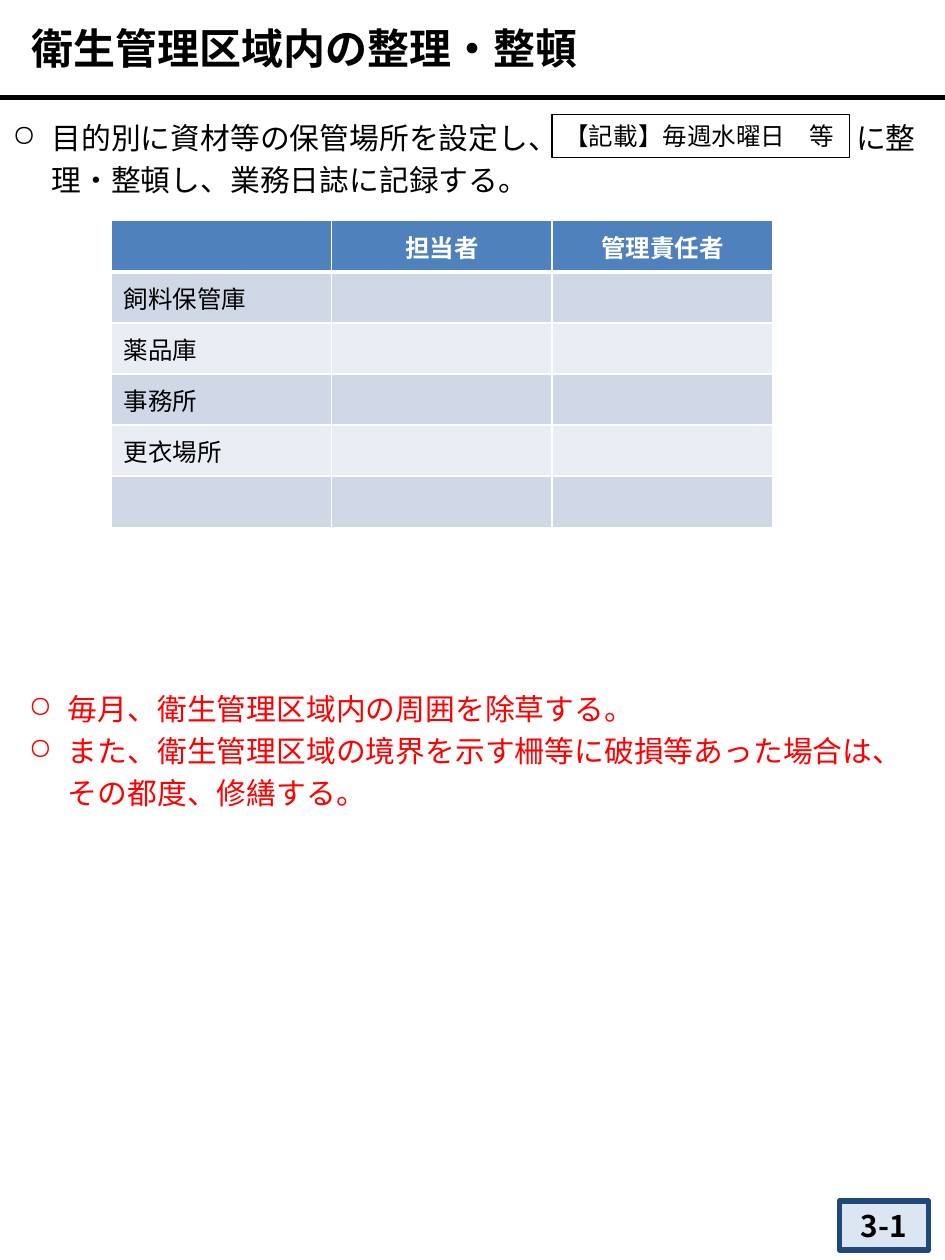
import pptx
import pptx.util
import pptx.dml.color
import pptx.enum.shapes
import pptx.enum.text
import pptx.oxml
import pptx.oxml.ns
from lxml import etree

Cm, Pt = pptx.util.Cm, pptx.util.Pt
ALIGN = pptx.enum.text.PP_ALIGN
MIDDLE = pptx.enum.text.MSO_ANCHOR.MIDDLE
RECT = pptx.enum.shapes.MSO_SHAPE.RECTANGLE

# Content
TITLE = "衛生管理区域内の整理・整頓"
GAP = "\u3000"  # one wide space, stretched to leave room for the entry box
TIDY = [["目的別に資材等の保管場所を設定し、", GAP, "に整理・整頓し、業務日誌に記録する。"]]
ENTRY = "【記載】毎週水曜日　等"
ROWS = [
    ["", "担当者", "管理責任者"],
    ["飼料保管庫", "", ""],
    ["薬品庫", "", ""],
    ["事務所", "", ""],
    ["更衣場所", "", ""],
    ["", "", ""],
]
REPAIR = [
    ["毎月、衛生管理区域内の周囲を除草する。"],
    ["また、衛生管理区域の境界を示す柵等に破損等あった場合は、その都度、修繕する。"],
]
PAGE = "3-1"

THEME = {
    "font": "Noto Sans CJK JP",
    "title": 24, "body": 17, "small": 14, "line": 24,
    "ink": "000000", "alert": "FF0000", "white": "FFFFFF",
    "head": "4F81BD", "bands": ["D0D8E8", "E9EDF4"],
    "tag": "DCE6F2", "edge": "1F497D",
}


def color(name):
    return pptx.dml.color.RGBColor.from_string(THEME.get(name, name))


def style(para, size, ink="ink", bold=False):
    for run in para.runs:
        font = run.font
        font.size, font.bold = Pt(THEME[size]), bold
        font.color.rgb = color(ink)
        font.name = THEME["font"]
        latin = font._element.find(pptx.oxml.ns.qn("a:latin"))
        east = etree.Element(pptx.oxml.ns.qn("a:ea"), typeface=THEME["font"])
        latin.addnext(east)


def bullets(slide, box, items, ink):
    frame = slide.shapes.add_textbox(*map(Cm, box)).text_frame
    frame.word_wrap = True
    for i, parts in enumerate(items):
        para = frame.add_paragraph() if i else frame.paragraphs[0]
        props = para._p.get_or_add_pPr()
        props.set("marL", str(Cm(0.79)))
        props.set("indent", str(-Cm(0.79)))
        etree.SubElement(props, pptx.oxml.ns.qn("a:buChar"), char="○")
        para.line_spacing = Pt(THEME["line"])
        for part in parts:
            run = para.add_run()
            run.text = part
            if part == GAP:  # ten characters wide in all
                run.font._element.set("spc", str(9 * THEME["body"] * 100))
        style(para, "body", ink)


def panel(slide, box, text, size, fill, edge, width, bold, align):
    shape = slide.shapes.add_shape(RECT, *map(Cm, box))
    shape.shadow.inherit = False
    if fill:
        shape.fill.solid()
        shape.fill.fore_color.rgb = color(fill)
    else:
        shape.fill.background()
    shape.line.color.rgb = color(edge)
    shape.line.width = Pt(width)
    frame = shape.text_frame
    frame.text = text
    frame.vertical_anchor = MIDDLE
    frame.paragraphs[0].alignment = align
    style(frame.paragraphs[0], size, bold=bold)


def borders(cell, row):
    props = cell._tc.get_or_add_tcPr()
    thick = {"T": row == 1, "B": row == 0}
    for side in "LRTB":
        width = Pt(3 if thick.get(side) else 1)
        props.append(pptx.oxml.parse_xml(
            f'<a:ln{side} {pptx.oxml.ns.nsdecls("a")} w="{width}"><a:solidFill>'
            f'<a:srgbClr val="{THEME["white"]}"/></a:solidFill></a:ln{side}>'))


def grid(slide, left, top, wide, high):
    count = len(ROWS)
    table = slide.shapes.add_table(
        count, len(ROWS[0]), Cm(left), Cm(top), Cm(wide), Cm(high * count)).table
    for r, row in enumerate(ROWS):
        fill = THEME["bands"][(r - 1) % 2] if r else "head"
        for c, text in enumerate(row):
            cell = table.cell(r, c)
            borders(cell, r)
            cell.fill.solid()
            cell.fill.fore_color.rgb = color(fill)
            cell.vertical_anchor = MIDDLE
            cell.text_frame.text = text
            para = cell.text_frame.paragraphs[0]
            para.alignment = ALIGN.LEFT if r else ALIGN.CENTER
            style(para, "small", "ink" if r else "white", r == 0)


def main():
    deck = pptx.Presentation()
    deck.slide_width, deck.slide_height = Cm(19.05), Cm(25.4)
    slide = deck.slides.add_slide(deck.slide_layouts[5])

    # Title and rule
    title = slide.shapes.title
    title.left, title.top, title.width, title.height = map(Cm, (0.33, 0.28, 15.14, 1.35))
    frame = title.text_frame
    frame.text = TITLE
    frame.auto_size = pptx.enum.text.MSO_AUTO_SIZE.NONE
    frame.vertical_anchor = MIDDLE
    frame.margin_left = frame.margin_right = Cm(0.3)
    frame.margin_top = frame.margin_bottom = Cm(0.15)
    frame.paragraphs[0].alignment = ALIGN.LEFT
    style(frame.paragraphs[0], "title", bold=True)

    rule = slide.shapes.add_connector(
        pptx.enum.shapes.MSO_CONNECTOR.STRAIGHT, 0, Cm(1.96), deck.slide_width, Cm(1.96))
    rule.line.color.rgb = color("ink")
    rule.line.width = Pt(3)
    etree.SubElement(rule._element.spPr, pptx.oxml.ns.qn("a:effectLst"))

    # Tidying rule, its entry box and the table of people in charge
    bullets(slide, (0, 2.16, 19.05, 1.85), TIDY, "ink")
    panel(slide, (11.13, 2.31, 6, 0.86), ENTRY, "small", None, "ink", 0.75, False, ALIGN.LEFT)
    grid(slide, 2.24, 4.45, 13.34, 1.03)

    # Weeding and repairs
    bullets(slide, (0.33, 13.67, 18.01, 2.72), REPAIR, "alert")

    # Page tag
    panel(slide, (16.92, 24.21, 1.8, 0.99), PAGE, "body", "tag", "edge", 3, True, ALIGN.CENTER)

    deck.save("out.pptx")


if __name__ == "__main__":
    main()
